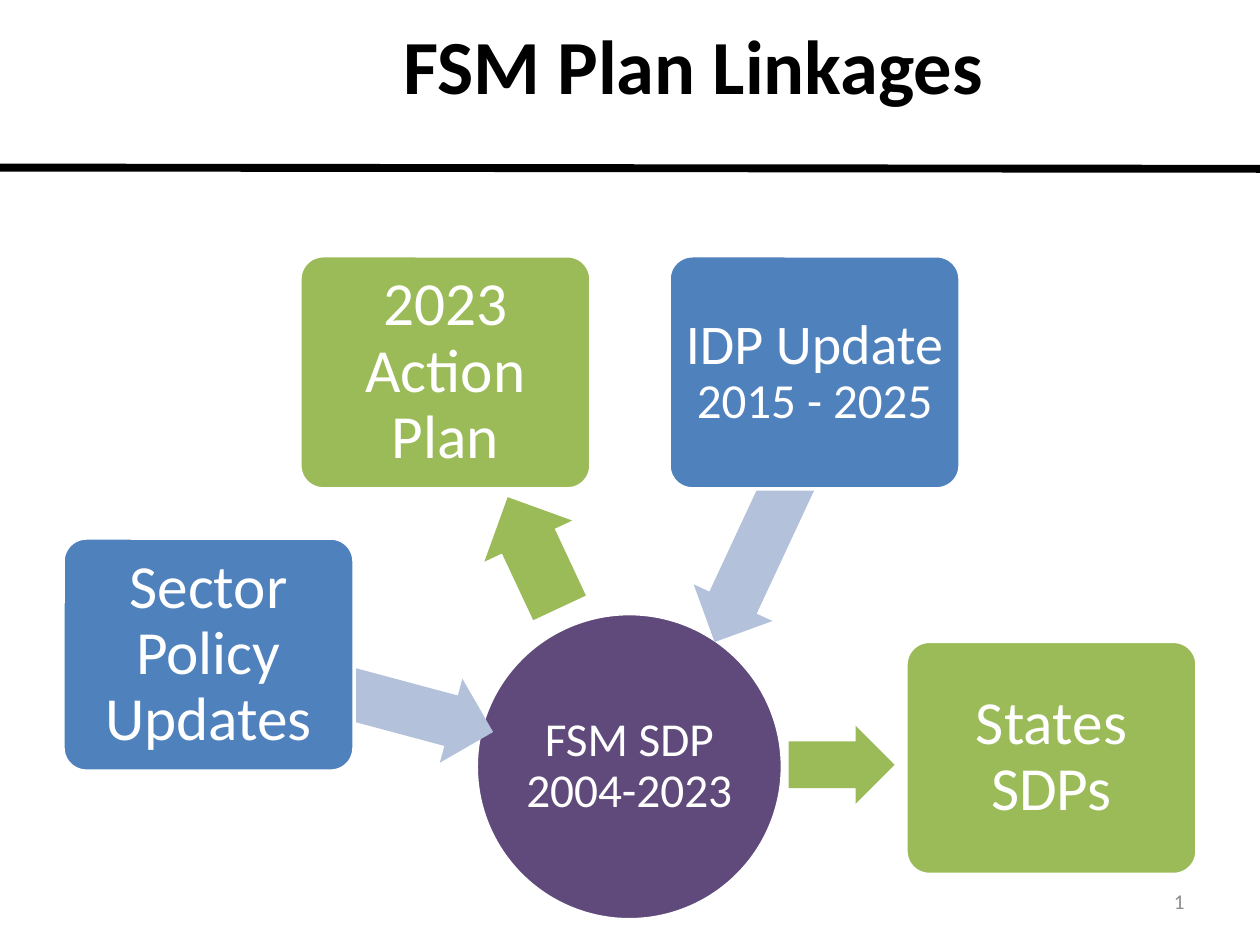
from pptx import Presentation
from pptx.dml.color import RGBColor
from pptx.enum.shapes import MSO_CONNECTOR, MSO_SHAPE
from pptx.enum.text import MSO_ANCHOR, PP_ALIGN
from pptx.oxml.ns import qn
from pptx.util import Inches, Pt
from lxml.etree import SubElement

BLUE, GREEN, PURPLE, PALE = "4F81BD", "9BBB59", "604A7B", "B3C1DB"
WHITE, BLACK, GRAY = "FFFFFF", "000000", "8C8C8C"
BOX_SIZE = (2.31, 1.85)

HUB = ([("FSM SDP 2004-2023", 27)], (3.78, 4.87, 2.43, 2.43))
PLANS = [
    ([("Sector Policy Updates", 35)], (0.5, 4.27), BLUE, (1.83, 5.19, 2.12, 0.69), 195, PALE),
    ([("2023 Action Plan", 35)], (2.38, 2.03), GREEN, (3.75, 4, 0.97, 0.77), 64.9, GREEN),
    ([("IDP Update ", 32), ("2015 - 2025", 28)], (5.31, 2.03), BLUE, (5.06, 3.79, 2.12, 0.69), 295, PALE),
    ([("States SDPs", 35)], (7.19, 5.09), GREEN, (6.26, 5.76, 0.84, 0.62), 180, GREEN),
]


def color(value):
    return RGBColor.from_string(value)


def write(shape, spans, ink=WHITE, bold=False, align=PP_ALIGN.CENTER,
          anchor=MSO_ANCHOR.MIDDLE, spacing=0.9, inset=(0.07, 0.07)):
    frame = shape.text_frame
    frame.word_wrap = True
    frame.vertical_anchor = anchor
    frame.margin_left = frame.margin_right = Inches(inset[0])
    frame.margin_top = frame.margin_bottom = Inches(inset[1])
    para = frame.paragraphs[0]
    para.alignment = align
    para.line_spacing = spacing
    for text, size in spans:
        span = para.add_run()
        span.text = text
        span.font.name = "Calibri"
        span.font.size = Pt(size)
        span.font.bold = bold
        span.font.color.rgb = color(ink)


def add_shape(page, kind, place, fill, outline=None, adjustments=(), rotation=0):
    shape = page.shapes.add_shape(kind, *map(Inches, place))
    shape.shadow.inherit = False
    shape.fill.solid()
    shape.fill.fore_color.rgb = color(fill)
    if outline:
        shape.line.color.rgb = color(outline)
        shape.line.width = Pt(2)
    else:
        shape.line.fill.background()
    for index, value in enumerate(adjustments):
        shape.adjustments[index] = value
    shape.rotation = rotation
    return shape


def add_text(page, place, spans, **style):
    write(page.shapes.add_textbox(*map(Inches, place)), spans, **style)


def main():
    deck = Presentation()
    deck.slide_width, deck.slide_height = Inches(10), Inches(7.5)
    page = deck.slides.add_slide(deck.slide_layouts[6])

    spans, place = HUB
    hub = add_shape(page, MSO_SHAPE.OVAL, place, PURPLE, WHITE)
    write(hub, spans, inset=(0.02, 0.02))

    for spans, corner, fill, arrow_place, rotation, arrow_fill in PLANS:
        add_shape(page, MSO_SHAPE.LEFT_ARROW, arrow_place, arrow_fill,
                  adjustments=(0.6, 0.5), rotation=rotation)
        box = add_shape(page, MSO_SHAPE.ROUNDED_RECTANGLE, corner + BOX_SIZE, fill, WHITE, (0.1,))
        write(box, spans)

    add_text(page, (7.17, 6.95, 2.33, 0.4), [("1", 12)], ink=GRAY,
             align=PP_ALIGN.RIGHT, spacing=1, inset=(0.1, 0.05))

    rule = page.shapes.add_connector(MSO_CONNECTOR.STRAIGHT, Inches(0), Inches(1.33),
                                     Inches(10), Inches(1.34))
    rule.line.color.rgb = color(BLACK)
    rule.line.width = Pt(4.5)
    SubElement(rule.element.spPr, qn("a:effectLst"))

    add_text(page, (1, 0.25, 9, 1.25), [("FSM Plan Linkages", 43.7)], ink=BLACK, bold=True,
             anchor=MSO_ANCHOR.TOP, spacing=0.8, inset=(0.1, 0.03))
    deck.save("out.pptx")


if __name__ == "__main__":
    main()
